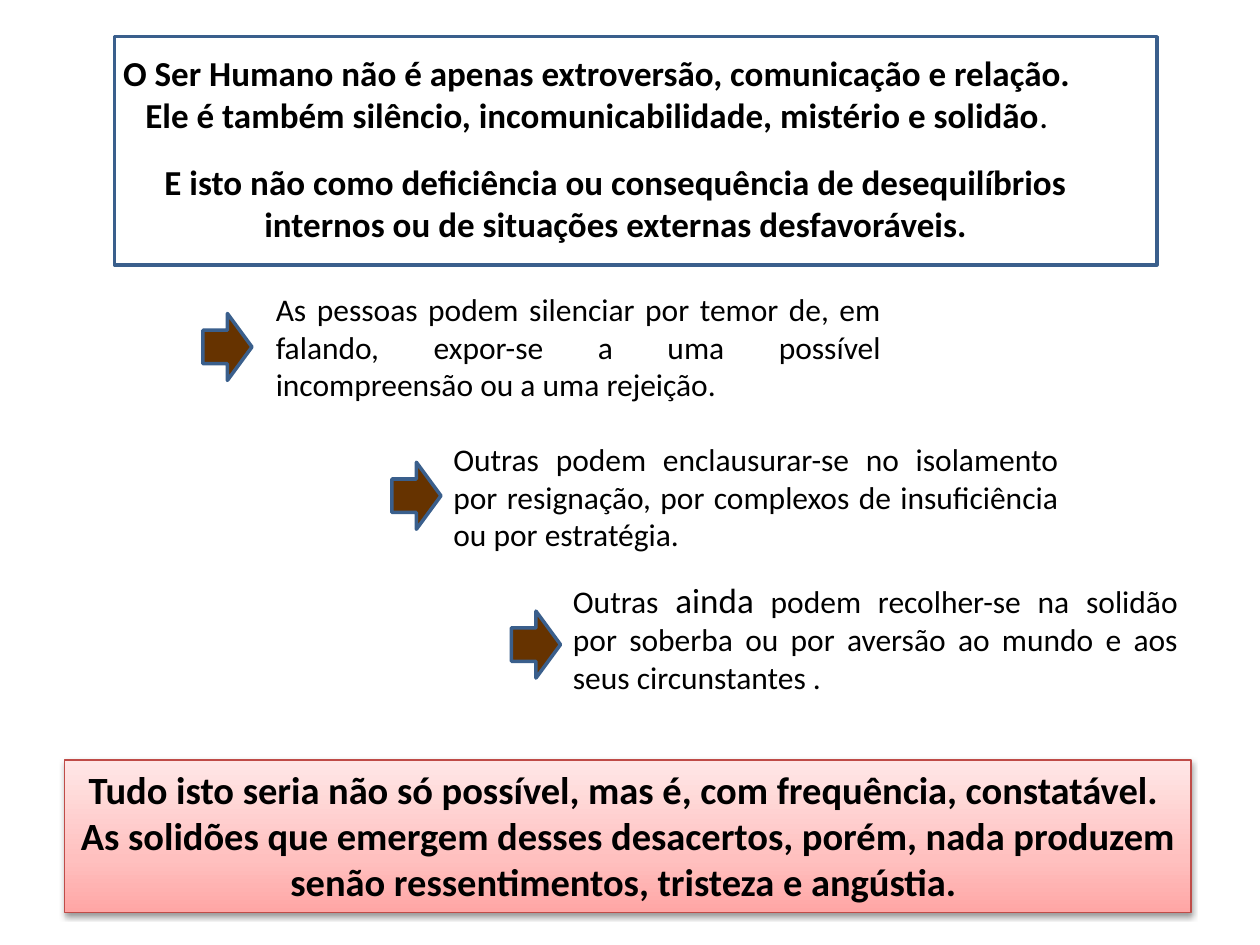
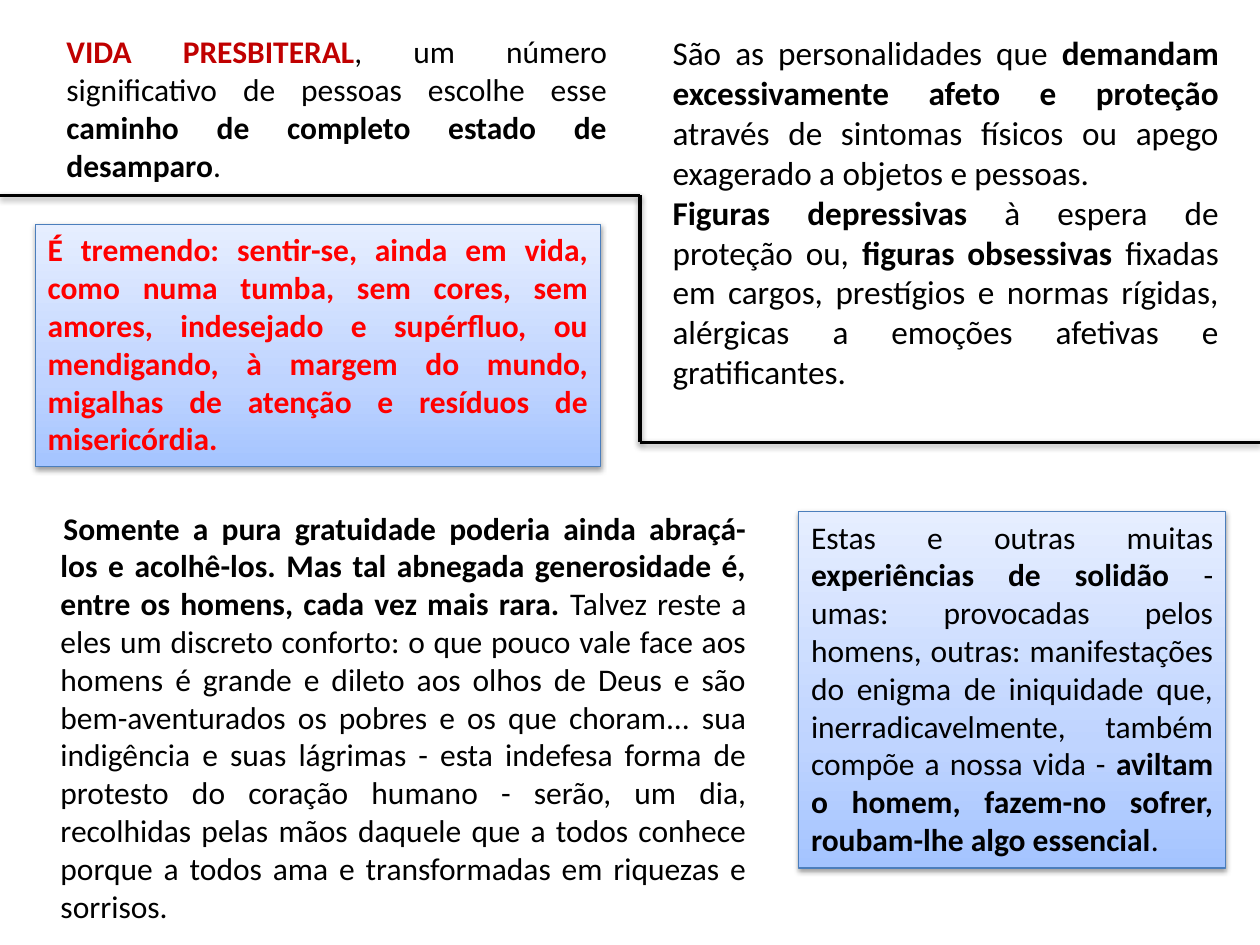
import copy
from dataclasses import dataclass

import pptx
import pptx.dml.color
import pptx.enum.shapes
import pptx.enum.text
import pptx.oxml
import pptx.oxml.ns
import pptx.util

Cm = pptx.util.Cm
Pt = pptx.util.Pt
SHAPE = pptx.enum.shapes.MSO_SHAPE
ALIGN = pptx.enum.text.PP_ALIGN
FIT = pptx.enum.text.MSO_AUTO_SIZE


@dataclass(frozen=True)
class Theme:
    font: str = "Calibri"
    body: int = 18
    column: int = 19
    lead: int = 20
    conclusion: int = 22
    ink: str = "000000"
    accent: str = "C00000"
    alert: str = "FF0000"
    arrow: str = "663300"
    outline: str = "3A5F8C"
    thick: float = 2
    thin: float = 0.75
    # gradient stops from bottom to top, then the border
    rose: tuple = (("FFA6A5", "FFC0BF", "FFE7E7"), "BF4C48")
    blue: tuple = (("A4C4FF", "BFD4FF", "E6EEFF"), "4B7EBC")
    stops: tuple = (0, 0.35, 1)


THEME = Theme()
BOLD = {"bold": True}

# Every text is a list of paragraphs; every paragraph is a list of (words, style).
# Every box is (left, top, width, height) in centimetres.
LEADS = [
    ((1.91, 0.91, 20.4, 1.96), [
        [("O Ser Humano não é apenas extroversão, comunicação e relação. ", BOLD)],
        [("Ele é também silêncio, incomunicabilidade, mistério e solidão", BOLD), (". ", {})],
    ]),
    ((2.11, 3.12, 20.6, 1.96), [
        [("E isto não como deficiência ou consequência de desequilíbrios internos "
          "ou de situações externas desfavoráveis.", BOLD)],
    ]),
]
LEAD_FRAME = (2.31, 0.74, 21.01, 4.6)

# (arrow left, text left, text top, words)
REASONS = [
    (4.09, 5.31, 5.72, [[
        ("As pessoas podem silenciar por temor de, em falando, expor-se a uma possível "
         "incompreensão ou a uma rejeição. ", {})]]),
    (7.9, 8.89, 8.74, [[
        ("Outras podem enclausurar-se no isolamento por resignação, por complexos de "
         "insuficiência ou por estratégia. ", {})]]),
    (10.31, 11.3, 11.53, [[
        ("Outras ", {}), ("ainda", {"size": THEME.lead}),
        (" podem recolher-se na solidão por soberba ou por aversão ao mundo e aos seus "
         "circunstantes .", {})]]),
]
REASON_SIZE = (12.7, 2.57)
ARROW_SIZE = (0.99, 1.35)
ARROW_TOP, ARROW_STEP = 6.32, 3

CONCLUSION = ((1.3, 15.32, 22.71, 3.07), [
    [("Tudo isto seria não só possível, mas é, com frequência, constatável. ", BOLD)],
    [("As solidões que emergem desses desacertos, porém, nada produzem senão "
      "ressentimentos, tristeza e angústia. ", BOLD)],
])

GRATUITY = ((0.97, 10.13, 14.33, 6), [[
    ("Somente a pura gratuidade poderia ainda abraçá-los e acolhê-los. Mas tal abnegada "
     "generosidade é, entre os homens, cada vez mais rara. ", BOLD),
    ("Talvez reste a eles um discreto conforto: o que pouco vale face aos homens é grande e "
     "dileto aos olhos de Deus e são bem-aventurados os pobres e os que choram... sua "
     "indigência e suas lágrimas - esta indefesa forma de protesto do coração humano - serão, "
     "um dia, recolhidas pelas mãos daquele que a todos conhece porque a todos ama e "
     "transformadas em riquezas e sorrisos.", {}),
]])
GRATUITY_INDENT = 0.06

PRIESTLY_LIFE = ((1.09, 0.53, 11.4, 3.33), [[
    ("VIDA PRESBITERAL", {"bold": True, "color": THEME.accent}),
    (", um número significativo de pessoas escolhe esse ", {}),
    ("caminho de completo estado de desamparo", BOLD), (". ", {}),
]])

PERSONALITIES = ((13.31, 0.53, 11.51, 7.57), [
    [("São as personalidades que ", {}),
     ("demandam excessivamente afeto e proteção ", BOLD),
     ("através de sintomas físicos ou apego exagerado a objetos e pessoas. ", {})],
    [("Figuras depressivas ", BOLD), ("à espera de proteção ou, ", {}),
     ("figuras obsessivas ", BOLD),
     ("fixadas em cargos, prestígios e normas rígidas, alérgicas a emoções afetivas e "
      "gratificantes. ", {})],
])

BLUE_PANELS = [
    ((16.1, 10.31, 8.61, 7.19), [[
        ("Estas e outras muitas ", {}), ("experiências de solidão ", BOLD),
        ("- umas: provocadas pelos homens, outras: manifestações do enigma de iniquidade que, "
         "inerradicavelmente, também compõe a nossa vida - ", {}),
        ("aviltam o homem, fazem-no sofrer, roubam-lhe algo essencial", BOLD), (". ", {}),
    ]]),
    ((0.71, 4.52, 11.4, 4.88), [[
        ("É tremendo: sentir-se, ainda em vida, como numa tumba, sem cores, sem amores, "
         "indesejado e supérfluo, ou mendigando, à margem do mundo, migalhas de atenção e "
         "resíduos de misericórdia. ", {"bold": True, "color": THEME.alert}),
    ]]),
]

DIVIDER = [(0, 3.94), (12.9, 3.94), (12.9, 8.92), (25.4, 8.92)]

SHADOW_XML = (
    f'<a:effectLst {pptx.oxml.ns.nsdecls("a")}>'
    '<a:outerShdw blurRad="40000" dist="20000" dir="5400000" rotWithShape="0">'
    '<a:srgbClr val="000000"><a:alpha val="38000"/></a:srgbClr>'
    '</a:outerShdw></a:effectLst>'
)


def rgb(value):
    return pptx.dml.color.RGBColor.from_string(value)


def cm(lengths):
    return [Cm(length) for length in lengths]


def set_line(target, color, width):
    target.line.color.rgb = rgb(color)
    target.line.width = Pt(width)


def add_shadow(target):
    """Append the soft drop shadow; call it after the line is set."""
    target._element.spPr.append(pptx.oxml.parse_xml(SHADOW_XML))


def write(target, paragraphs, size, align=ALIGN.JUSTIFY, fit=FIT.SHAPE_TO_FIT_TEXT):
    frame = target.text_frame
    frame.word_wrap = True
    frame.auto_size = fit
    frame.vertical_anchor = pptx.enum.text.MSO_ANCHOR.TOP
    for index, runs in enumerate(paragraphs):
        paragraph = frame.add_paragraph() if index else frame.paragraphs[0]
        paragraph.alignment = align
        for words, style in runs:
            run = paragraph.add_run()
            run.text = words
            run.font.name = THEME.font
            run.font.size = Pt(style.get("size", size))
            run.font.bold = style.get("bold", False)
            run.font.color.rgb = rgb(style.get("color", THEME.ink))


def add_text(slide, box, paragraphs, size, **options):
    text = slide.shapes.add_textbox(*cm(box))
    write(text, paragraphs, size, **options)
    return text


def add_outlined(slide, preset, box, fill=None):
    shape = slide.shapes.add_shape(preset, *cm(box))
    if fill:
        shape.fill.solid()
        shape.fill.fore_color.rgb = rgb(fill)
    else:
        shape.fill.background()
    set_line(shape, THEME.outline, THEME.thick)
    shape.shadow.inherit = False


def add_panel(slide, box, paragraphs, palette, size, **options):
    """Add a text panel with a three-stop vertical gradient and a shadow."""
    colors, border = palette
    panel = slide.shapes.add_shape(SHAPE.RECTANGLE, *cm(box))
    panel.fill.gradient()
    panel.fill.gradient_angle = 90
    stop_list = panel._element.spPr.find(".//" + pptx.oxml.ns.qn("a:gsLst"))
    stop_list.append(copy.deepcopy(stop_list[0]))
    for stop, position, color in zip(panel.fill.gradient_stops, THEME.stops, colors):
        stop.position = position
        stop.color.rgb = rgb(color)
    set_line(panel, border, THEME.thin)
    add_shadow(panel)
    write(panel, paragraphs, size, **options)


def build_silence(slide):
    for box, paragraphs in LEADS:
        add_text(slide, box, paragraphs, THEME.lead, align=ALIGN.CENTER)
    for row, (arrow_left, left, top, paragraphs) in enumerate(REASONS):
        add_text(slide, (left, top, *REASON_SIZE), paragraphs, THEME.body)
        arrow_top = ARROW_TOP + row * ARROW_STEP
        add_outlined(slide, SHAPE.RIGHT_ARROW, (arrow_left, arrow_top, *ARROW_SIZE), THEME.arrow)
    add_panel(slide, *CONCLUSION, THEME.rose, THEME.conclusion, align=ALIGN.CENTER)
    add_outlined(slide, SHAPE.FLOWCHART_PROCESS, LEAD_FRAME)


def build_solitude(slide):
    gratuity = add_text(slide, *GRATUITY, THEME.body, fit=FIT.NONE)
    properties = gratuity.text_frame.paragraphs[0]._p.get_or_add_pPr()
    properties.set("indent", str(Cm(GRATUITY_INDENT)))
    add_text(slide, *PRIESTLY_LIFE, THEME.body)
    add_text(slide, *PERSONALITIES, THEME.column)
    for box, paragraphs in BLUE_PANELS:
        add_panel(slide, box, paragraphs, THEME.blue, THEME.body)
    for start, end in zip(DIVIDER, DIVIDER[1:]):
        segment = slide.shapes.add_connector(
            pptx.enum.shapes.MSO_CONNECTOR.STRAIGHT, *cm(start + end))
        set_line(segment, THEME.ink, THEME.thick)
        add_shadow(segment)


def main():
    deck = pptx.Presentation()
    deck.slide_width, deck.slide_height = cm((25.4, 19.05))
    blank = deck.slide_layouts[6]
    for build in (build_silence, build_solitude):
        build(deck.slides.add_slide(blank))
    deck.save("out.pptx")


if __name__ == "__main__":
    main()
